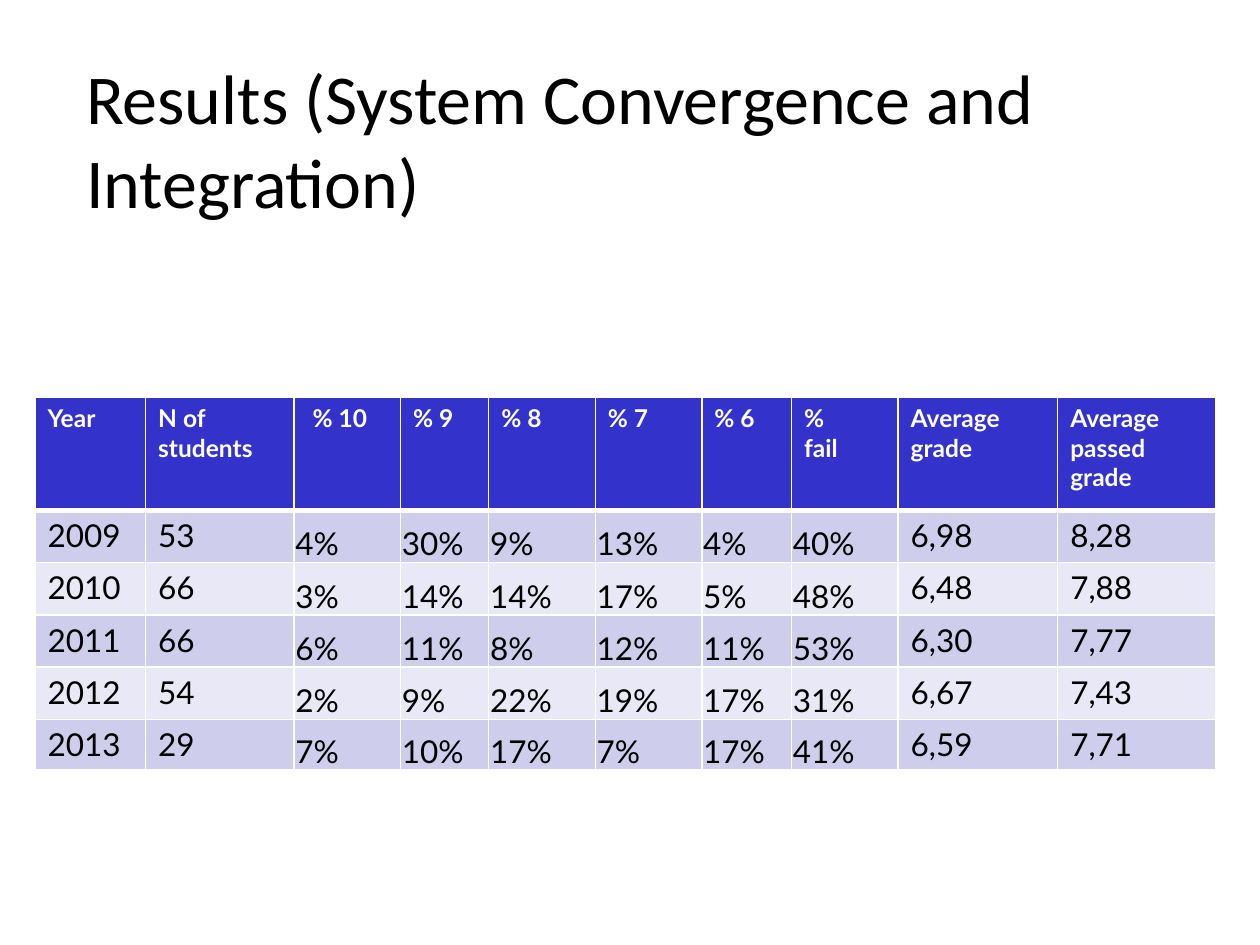
from typing import NamedTuple

import pptx
import pptx.dml.color
import pptx.enum.text
import pptx.oxml
import pptx.oxml.ns
import pptx.util

Pt = pptx.util.Pt
Anchor = pptx.enum.text.MSO_ANCHOR


class Column(NamedTuple):
    heading: str
    width: float
    values: list[str]
    tight: bool = False


COLUMNS = [
    Column("Year", 63.2, ["2009", "2010", "2011", "2012", "2013"]),
    Column("N of \nstudents", 84.8, ["53", "66", "66", "54", "29"]),
    Column(" % 10", 60.9, ["4%", "3%", "6%", "2%", "7%"], True),
    Column("% 9", 50.4, ["30%", "14%", "11%", "9%", "10%"], True),
    Column("% 8", 60.9, ["9%", "14%", "8%", "22%", "17%"], True),
    Column("% 7", 60.9, ["13%", "17%", "12%", "19%", "7%"], True),
    Column("% 6", 51.3, ["4%", "5%", "11%", "17%", "17%"], True),
    Column("% \nfail", 60.9, ["40%", "48%", "53%", "31%", "41%"], True),
    Column("Average grade", 91.2, ["6,98", "6,48", "6,30", "6,67", "6,59"]),
    Column("Average passed \ngrade", 90.4, ["8,28", "7,88", "7,77", "7,43", "7,71"]),
]
ROW_HEIGHTS = [64.6, 29.9, 29.9, 29.9, 29.9, 25.2]
HEADER_FILL = "3333CC"
BAND_FILLS = ["CECEEC", "E8E8F6"]


def rgb(value: str) -> pptx.dml.color.RGBColor:
    return pptx.dml.color.RGBColor.from_string(value)


def write(frame, text: str, *, size: float, font: str = "Lato",
          color: str = "000000", bold: bool = False) -> None:
    paragraph = frame.paragraphs[0]
    paragraph.text = text
    paragraph.alignment = pptx.enum.text.PP_ALIGN.LEFT
    for run in paragraph.runs:
        run.font.size = Pt(size)
        run.font.name = font
        run.font.bold = bold
        run.font.color.rgb = rgb(color)


def set_borders(cell, **widths: float) -> None:
    """Draw white borders; keywords are L, R, T and B, widths are in points."""
    properties = cell._tc.get_or_add_tcPr()
    for index, (side, width) in enumerate(widths.items()):
        line = pptx.oxml.parse_xml(
            f'<a:ln{side} {pptx.oxml.ns.nsdecls("a")} w="{Pt(width)}">'
            '<a:solidFill><a:srgbClr val="FFFFFF"/></a:solidFill>'
            f'</a:ln{side}>')
        properties.insert(index, line)


def fill_cell(cell, fill: str) -> None:
    cell.fill.solid()
    cell.fill.fore_color.rgb = rgb(fill)


def tighten(cell) -> None:
    """Set the text at the foot of the cell, with almost no margin."""
    cell.vertical_anchor = Anchor.BOTTOM
    cell.margin_left = cell.margin_right = cell.margin_top = Pt(0.75)
    cell.margin_bottom = Pt(0)


def add_title(slide) -> None:
    title = slide.shapes.title
    title.left, title.top, title.width, title.height = (
        Pt(42), Pt(37.5), Pt(642), Pt(83))
    frame = title.text_frame
    frame.word_wrap = True
    frame.auto_size = pptx.enum.text.MSO_AUTO_SIZE.NONE
    frame.vertical_anchor = Anchor.MIDDLE
    write(frame, "Results (System Convergence and Integration)",
          size=40, font="Calibri")


def add_results_table(slide) -> None:
    width = sum(column.width for column in COLUMNS)
    table = slide.shapes.add_table(
        len(ROW_HEIGHTS), len(COLUMNS), Pt(20), Pt(227),
        Pt(width), Pt(sum(ROW_HEIGHTS))).table
    for row, height in zip(table.rows, ROW_HEIGHTS):
        row.height = Pt(height)
    for index, column in enumerate(COLUMNS):
        table.columns[index].width = Pt(column.width)
        header = table.cell(0, index)
        write(header.text_frame, column.heading, size=14, color="FFFFFF", bold=True)
        fill_cell(header, HEADER_FILL)
        set_borders(header, L=1, R=1, T=1, B=3)
        for row_index, value in enumerate(column.values, start=1):
            cell = table.cell(row_index, index)
            write(cell.text_frame, value, size=18)
            fill_cell(cell, BAND_FILLS[(row_index - 1) % 2])
            set_borders(cell, L=1, R=1, T=3 if row_index == 1 else 1, B=1)
            if column.tight:
                tighten(cell)


def main() -> None:
    presentation = pptx.Presentation()
    presentation.slide_width, presentation.slide_height = Pt(720), Pt(540)
    slide = presentation.slides.add_slide(presentation.slide_layouts[5])
    add_title(slide)
    add_results_table(slide)
    presentation.save("out.pptx")


if __name__ == "__main__":
    main()
